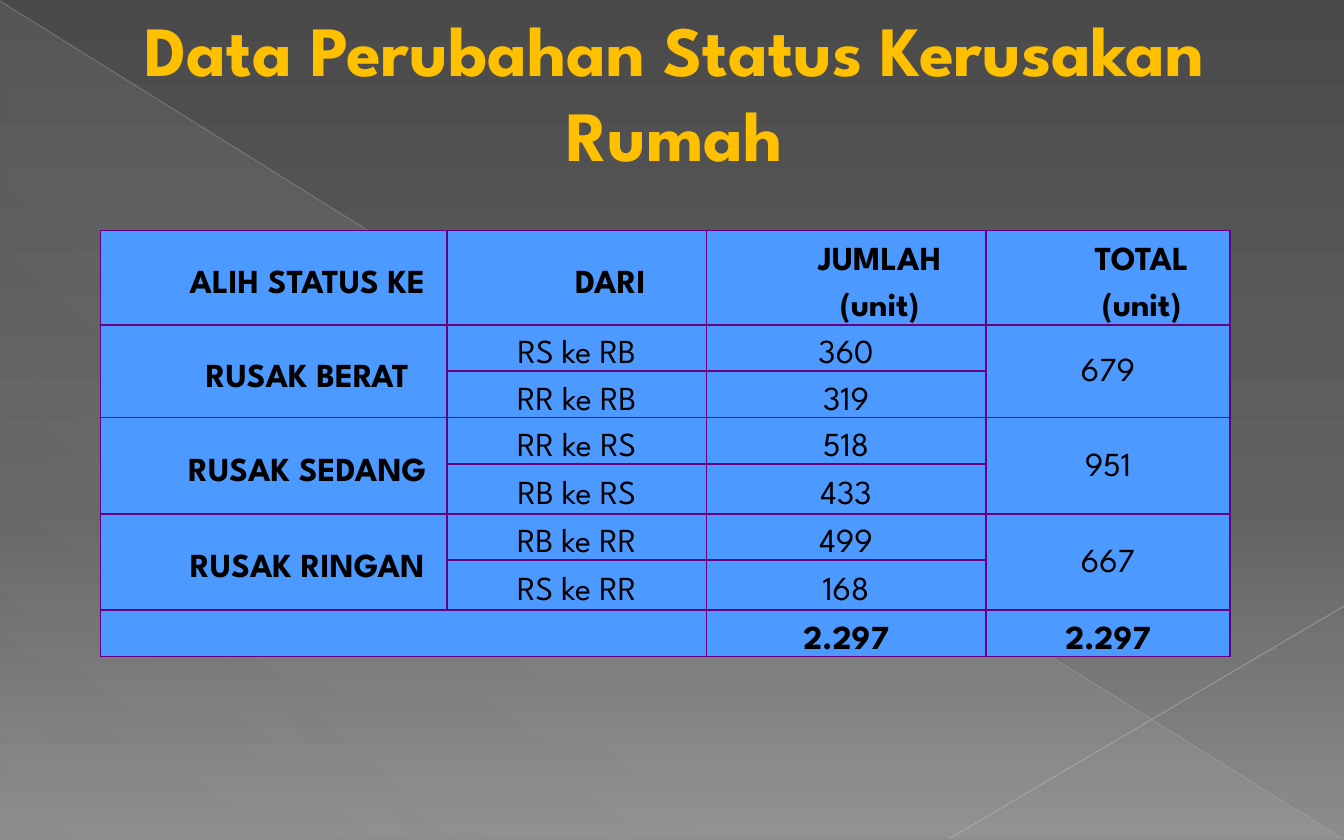
import pptx
import pptx.util
import pptx.oxml
import pptx.oxml.ns
import pptx.dml.color
import pptx.enum.shapes
import pptx.enum.text
import lxml.etree

Cm = pptx.util.Cm
Pt = pptx.util.Pt
qn = pptx.oxml.ns.qn
FONT = "League Spartan"
HEX = {"gold": "FFC000", "cell": "4C99FF", "edge": "68007F", "ink": "000000",
       "dark": "4A4A4A", "mid": "626262", "pale": "8C8C8C",
       "veil": "D2D2D2", "ray": "BFBFBF", "beam": "C6C6C6"}
COLS = [6.55, 4.9, 5.28, 4.62]
ROWS = [1.78, 0.84, 0.84, 0.84, 0.94, 0.84, 0.94, 0.84]
HEADS = ["ALIH STATUS KE", "DARI", "JUMLAH (unit)", "TOTAL (unit)"]
GROUPS = [
    ("RUSAK BERAT", "679", [("RS ke RB", "360"), ("RR ke RB", "319")]),
    ("RUSAK SEDANG", "951", [("RR ke RS", "518"), ("RB ke RS", "433")]),
    ("RUSAK RINGAN", "667", [("RB ke RR", "499"), ("RS ke RR", "168")]),
]
SUM = "2.297"


def rgb(name):
    """Return the named colour."""
    return pptx.dml.color.RGBColor.from_string(HEX[name])


def add(root, tag, **attrs):
    """Append a child element with attributes."""
    node = lxml.etree.SubElement(root, qn(tag))
    for key, val in attrs.items():
        node.set(key, str(val))
    return node


def tint(root, name, alpha=100):
    """Append a colour with its opacity in percent."""
    node = add(root, "a:srgbClr", val=HEX[name])
    if alpha < 100:
        add(node, "a:alpha", val=alpha * 1000)


def blend(root, stops, angle):
    """Set the stops and clockwise angle of a gradient fill."""
    grad = root.find(".//" + qn("a:gradFill"))
    items = grad.find(qn("a:gsLst"))
    for old in list(items):
        items.remove(old)
    for pos, name, alpha in stops:
        tint(add(items, "a:gs", pos=pos * 1000), name, alpha)
    grad.find(qn("a:lin")).set("ang", str(angle * 60000))


def add_ray(slide, start, end, name, width, alpha):
    """Draw a faint straight line."""
    ray = slide.shapes.add_connector(
        pptx.enum.shapes.MSO_CONNECTOR.STRAIGHT,
        *[Cm(val) for val in start + end])
    ray.line.width = Pt(width)
    ray.line.color.rgb = rgb(name)
    solid = ray.line._ln.find(qn("a:solidFill"))
    solid.clear()
    tint(solid, name, alpha)
    add(ray.element.spPr, "a:effectLst")


def add_decor(slide):
    """Paint the background, the veil and the rays."""
    slide.background.fill.gradient()
    blend(slide.element, [(0, "dark", 100), (60, "mid", 100),
                          (100, "pale", 100)], 90)
    veil = slide.shapes.add_shape(
        pptx.enum.shapes.MSO_SHAPE.RIGHT_TRIANGLE,
        Cm(0.02), Cm(0.02), Cm(25.35), Cm(15.83))
    veil.shadow.inherit = False
    veil.line.fill.background()
    veil.fill.gradient()
    blend(veil.element, [(0, "veil", 10), (70, "veil", 8),
                         (100, "veil", 1)], 133)
    add_ray(slide, (0, 0.02), (25.37, 15.85), "ray", 0.39, 35)
    add_ray(slide, (25.4, 11.46), (17.95, 15.85), "beam", 0.47, 45)


def style(para, size, name, bold, indent=0, gap=1.0):
    """Centre a paragraph and format its runs."""
    para.alignment = pptx.enum.text.PP_ALIGN.CENTER
    para.line_spacing = gap
    props = para._p.get_or_add_pPr()
    props.set("marL", str(Cm(indent)))
    props.set("indent", "0")
    for run in para.runs:
        run.font.name = FONT
        run.font.size = Pt(size)
        run.font.bold = bold
        run.font.color.rgb = rgb(name)


def set_title(slide, text):
    """Place and format the title above the decoration."""
    title = slide.shapes.title
    title.element.getparent().append(title.element)
    title.left, title.top = Cm(0.64), Cm(0.89)
    title.width, title.height = Cm(22.86), Cm(3.23)
    frame = title.text_frame
    frame.text = text
    frame.word_wrap = True
    frame.auto_size = pptx.enum.text.MSO_AUTO_SIZE.NONE
    frame.vertical_anchor = pptx.enum.text.MSO_ANCHOR.MIDDLE
    frame.margin_bottom = Cm(1.7)
    style(frame.paragraphs[0], 37.8, "gold", True, 1.35)


def dress(cell):
    """Give a cell its fill, margins and borders."""
    cell.margin_left = cell.margin_right = Cm(0.18)
    cell.margin_top = cell.margin_bottom = 0
    cell.vertical_anchor = pptx.enum.text.MSO_ANCHOR.MIDDLE
    props = cell._tc.get_or_add_tcPr()
    for side in ("a:lnL", "a:lnR", "a:lnT", "a:lnB"):
        edge = add(props, side, w=Pt(1))
        tint(add(edge, "a:solidFill"), "edge")
    cell.fill.solid()
    cell.fill.fore_color.rgb = rgb("cell")


def put(cell, text, bold=False, indent=0, gap=1.5):
    """Write text into a cell."""
    cell.text_frame.text = text
    style(cell.text_frame.paragraphs[0], 18, "ink", bold, indent, gap)


def add_grid(slide):
    """Build the table of status changes."""
    grid = slide.shapes.add_table(
        len(ROWS), len(COLS), Cm(1.9), Cm(4.36),
        Cm(sum(COLS)), Cm(sum(ROWS))).table
    for col, width in zip(grid.columns, COLS):
        col.width = Cm(width)
    for row, height in zip(grid.rows, ROWS):
        row.height = Cm(height)
    for cell in grid.iter_cells():
        dress(cell)
    for col, head in enumerate(HEADS):
        put(grid.cell(0, col), head, True, 1.27)
    for num, (label, total, moves) in enumerate(GROUPS):
        top = 1 + 2 * num
        for col in (0, 3):
            grid.cell(top, col).merge(grid.cell(top + 1, col))
        put(grid.cell(top, 0), label, True, 1.27)
        put(grid.cell(top, 3), total, gap=1.15)
        for row, (move, count) in enumerate(moves, top):
            put(grid.cell(row, 1), move)
            put(grid.cell(row, 2), count)
    last = len(ROWS) - 1
    grid.cell(last, 0).merge(grid.cell(last, 1))
    for col in (2, 3):
        put(grid.cell(last, col), SUM, True)


def main():
    """Build and save the slide."""
    deck = pptx.Presentation()
    deck.slide_width, deck.slide_height = Cm(25.4), Cm(15.88)
    slide = deck.slides.add_slide(deck.slide_layouts[5])
    add_decor(slide)
    set_title(slide, "Data Perubahan Status Kerusakan Rumah")
    add_grid(slide)
    deck.save("out.pptx")


if __name__ == "__main__":
    main()
